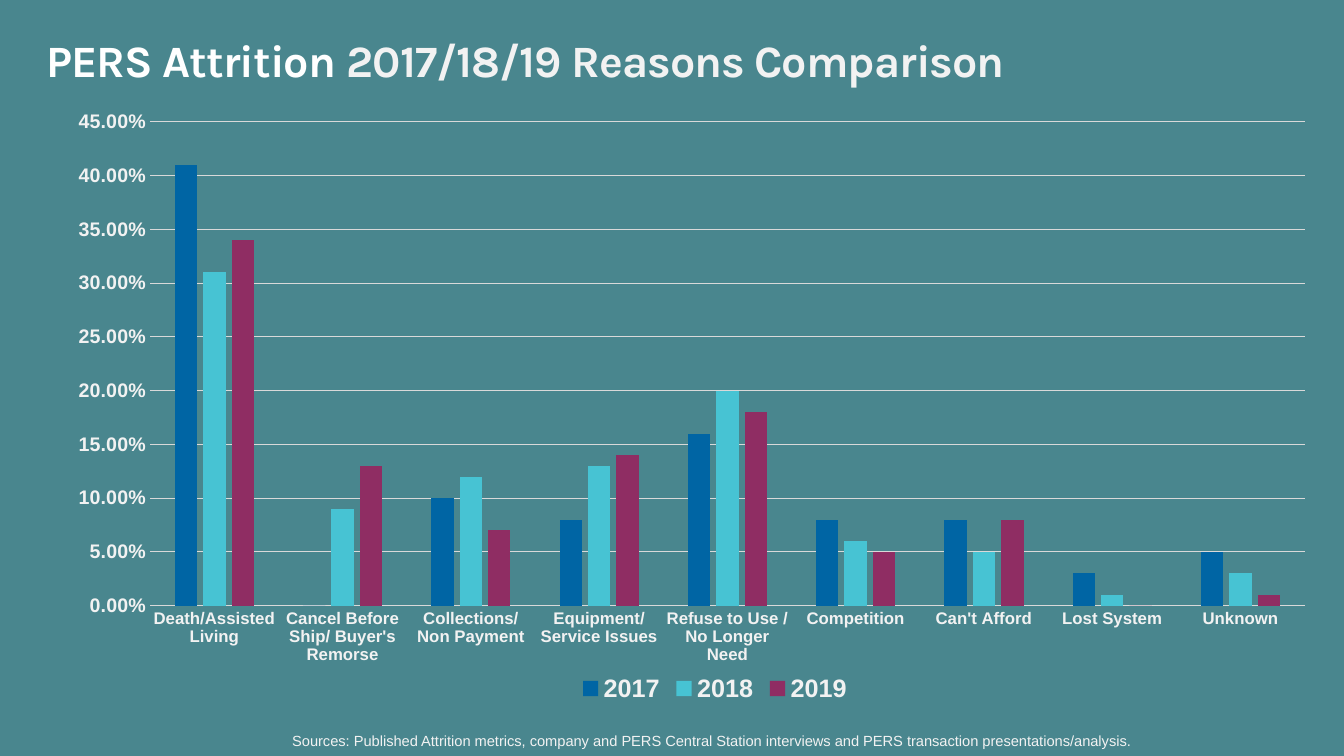
from pptx import Presentation
from pptx import oxml
from pptx.chart import data as cd
from pptx.dml.color import RGBColor
from pptx.enum import chart as ch, text as tx
from pptx.oxml import ns
from pptx.util import Inches, Pt

HUES = {"back": "49868E", "white": "FFFFFF", "pale": "F2F2F2", "grid": "D9D9D9",
        "2017": "0065A4", "2018": "47C3D3", "2019": "8F2D63"}
CATS = ["Death/Assisted Living", "Cancel Before Ship/ Buyer's Remorse",
        "Collections/ Non Payment", "Equipment/ Service Issues",
        "Refuse to Use / No Longer Need", "Competition", "Can't Afford",
        "Lost System", "Unknown"]
RATES = {
    "2017": [0.41, 0, 0.1, 0.08, 0.16, 0.08, 0.08, 0.03, 0.05],
    "2018": [0.31, 0.09, 0.12, 0.13, 0.2, 0.06, 0.05, 0.01, 0.03],
    "2019": [0.34, 0.13, 0.07, 0.14, 0.18, 0.05, 0.08, 0, 0.01],
}


def rgb(name):
    """Return the named colour."""
    return RGBColor.from_string(HUES[name])


def style(font, size, hue="pale", bold=False, face="Arial"):
    """Format a font."""
    font.size, font.bold, font.name = Pt(size), bold, face
    font.color.rgb = rgb(hue)


def write(para, words, space=None, **form):
    """Add a run of formatted text to a paragraph."""
    run = para.add_run()
    run.text = words
    style(run.font, **form)
    if space is not None:
        run.font._element.set("spc", str(int(space * 100)))


def place(shape, box):
    """Move a shape to a box given in inches."""
    shape.left, shape.top, shape.width, shape.height = map(Inches, box)


def head(slide, box):
    """Fill the title placeholder."""
    title = slide.shapes.title
    place(title, box)
    frame = title.text_frame
    frame.word_wrap = True
    frame.auto_size = tx.MSO_AUTO_SIZE.NONE
    frame.vertical_anchor = tx.MSO_ANCHOR.MIDDLE
    para = frame.paragraphs[0]
    para.alignment, para.line_spacing = tx.PP_ALIGN.LEFT, 0.9
    for words, hue in (("PERS Attrition ", "white"),
                       ("2017/18/19 Reasons Comparison", "pale")):
        write(para, words, space=-0.7, size=32, hue=hue, bold=True, face="Karla")


def pin(part, spot, box, index, target=""):
    """Pin a chart part to a spot in inches, measured within the chart box."""
    for old in part.findall(ns.qn("c:layout")):
        part.remove(old)
    left, top, wide, high = box
    sides = {"x": left / wide, "y": top / high}
    sides = {"x": (spot[0] - left) / wide, "y": (spot[1] - top) / high}
    if len(spot) == 4:
        sides.update(w=spot[2] / wide, h=spot[3] / high)
    marks = "".join(f'<c:{key}Mode val="edge"/>' for key in "xy")
    marks += "".join(f'<c:{key} val="{val:.4f}"/>' for key, val in sides.items())
    part.insert(index, oxml.parse_xml(
        f'<c:layout {ns.nsdecls("c")}><c:manualLayout>'
        f'{target}{marks}</c:manualLayout></c:layout>'))


def bars(slide, box):
    """Draw the clustered columns, axes and legend."""
    data = cd.CategoryChartData(number_format="0.00%")
    data.categories = CATS
    for year, rates in RATES.items():
        data.add_series(year, rates)
    chart = slide.shapes.add_chart(
        ch.XL_CHART_TYPE.COLUMN_CLUSTERED, *map(Inches, box), data).chart
    chart.has_title = False
    style(chart.font, 10)
    plot = chart.plots[0]
    plot.gap_width, plot.overlap, plot.vary_by_categories = 219, -27, False
    for row in plot.series:
        row.format.fill.solid()
        row.format.fill.fore_color.rgb = rgb(row.name)
    cat, val = chart.category_axis, chart.value_axis
    for axis, size in ((cat, 12), (val, 14)):
        axis.major_tick_mark = axis.minor_tick_mark = ch.XL_TICK_MARK.NONE
        style(axis.tick_labels.font, size, bold=True)
    val.minimum_scale, val.maximum_scale, val.major_unit = 0, 0.45, 0.05
    val.tick_labels.number_format = "0.00%"
    val.tick_labels.number_format_is_linked = False
    val.format.line.fill.background()
    for part in (cat, val.major_gridlines):
        part.format.line.color.rgb = rgb("grid")
        part.format.line.width = Pt(0.75)
    chart.has_legend = True
    legend = chart.legend
    legend.position = ch.XL_LEGEND_POSITION.BOTTOM
    legend.include_in_layout = False
    style(legend.font, 18, bold=True)
    left, top = box[:2]
    pin(chart._chartSpace.chart.plotArea, (left + 0.97, top + 0.23, 11.45, 4.8),
        box, 0, '<c:layoutTarget val="inner"/>')
    pin(legend._element, (left + 5.18, top + 5.66), box, 1)


def note(slide, box):
    """Write the source line."""
    frame = slide.shapes.add_textbox(*map(Inches, box)).text_frame
    frame.word_wrap = True
    write(frame.paragraphs[0],
          "Sources: Published Attrition metrics, company and PERS Central Station "
          "interviews and PERS transaction presentations/analysis.", size=10.5)


def main():
    """Build and save the slide."""
    deck = Presentation()
    deck.slide_width, deck.slide_height = Inches(13.33), Inches(7.5)
    slide = deck.slides.add_slide(deck.slide_layouts.get_by_name("Title Only"))
    slide.background.fill.solid()
    slide.background.fill.fore_color.rgb = rgb("back")
    head(slide, (0.36, 0.3, 11.49, 0.64))
    bars(slide, (0.52, 0.98, 12.66, 6.18))
    note(slide, (2.8, 7.21, 10.53, 0.29))
    deck.save("out.pptx")


if __name__ == "__main__":
    main()
